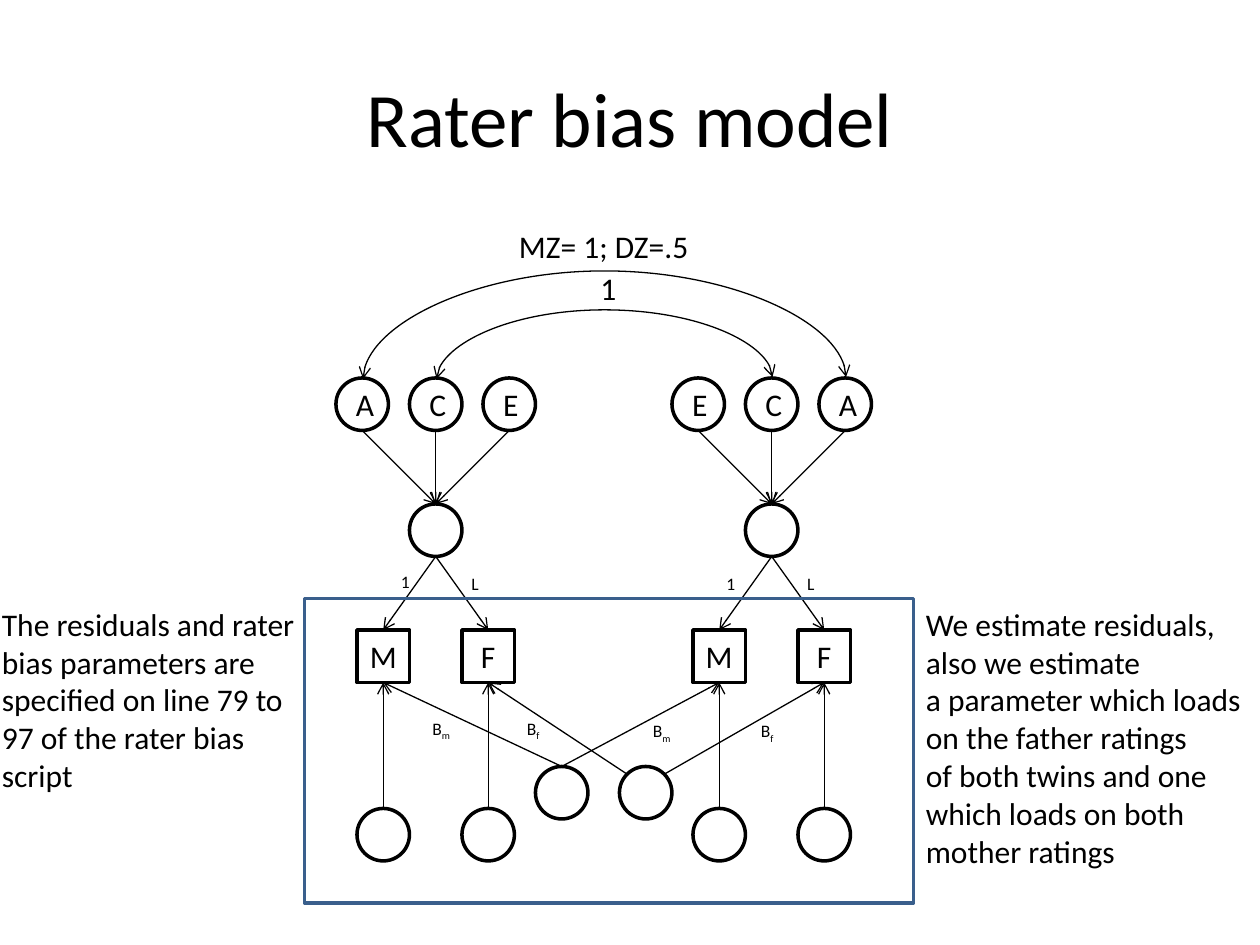
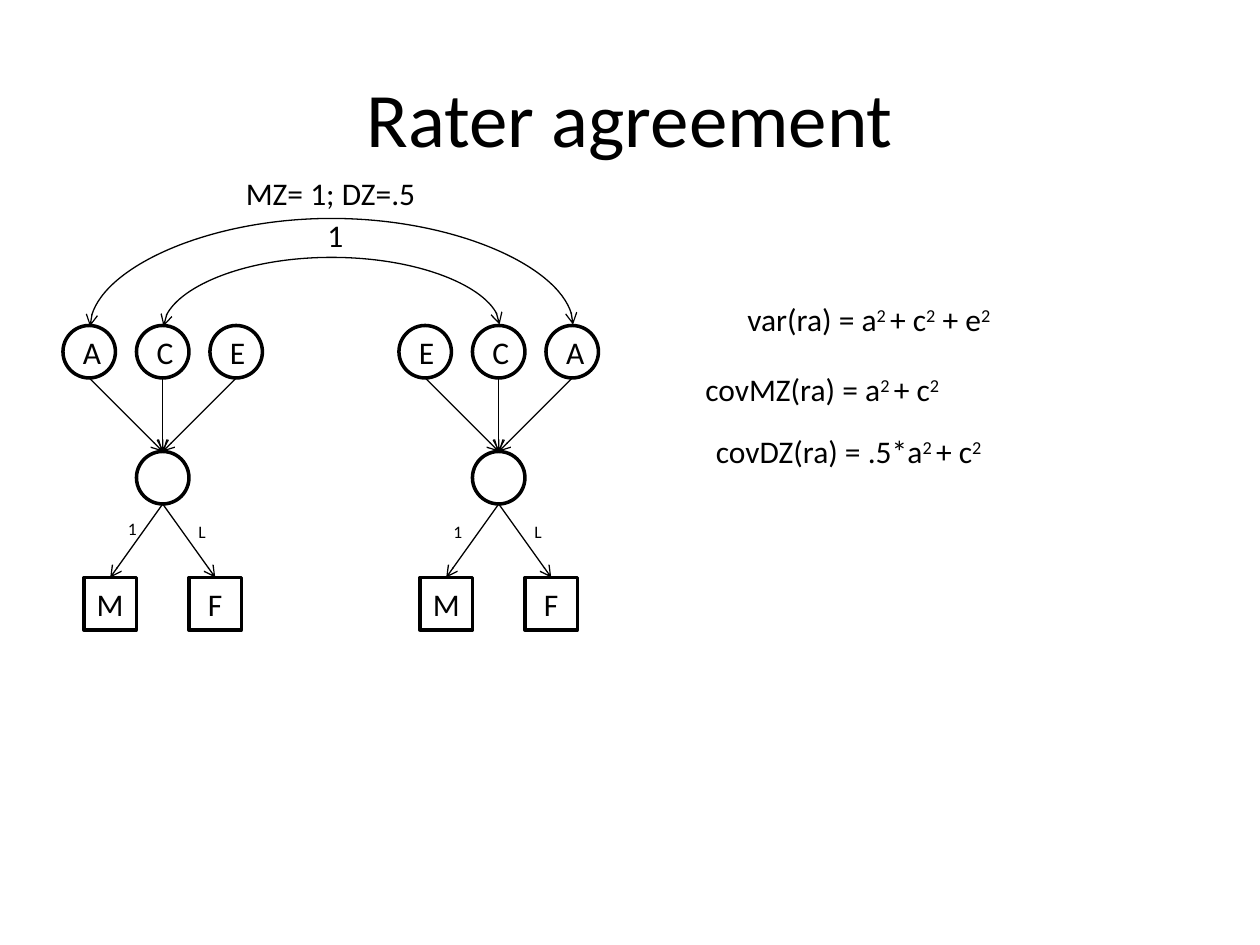
from pptx import Presentation
from pptx.dml.color import RGBColor
from pptx.enum.shapes import MSO_CONNECTOR, MSO_SHAPE
from pptx.enum.text import MSO_ANCHOR, MSO_AUTO_SIZE, PP_ALIGN
from pptx.oxml.ns import qn
from pptx.util import Inches, Pt
from lxml import etree

BLACK = RGBColor(0x00, 0x00, 0x00)
WHITE = RGBColor(0xFF, 0xFF, 0xFF)
FRAME_BLUE = RGBColor(0x3A, 0x5F, 0x8C)
CIRCLE, SQUARE = MSO_SHAPE.OVAL, MSO_SHAPE.RECTANGLE
STRAIGHT, CURVE = MSO_CONNECTOR.STRAIGHT, MSO_CONNECTOR.CURVE
CENTER, LEFT = PP_ALIGN.CENTER, PP_ALIGN.LEFT
MIDDLE, TOP = MSO_ANCHOR.MIDDLE, MSO_ANCHOR.TOP
FIT_SHAPE = MSO_AUTO_SIZE.SHAPE_TO_FIT_TEXT

FONT = "Calibri"
COLUMNS, ROWS = 120, 90
NODE = 5
HALF = NODE / 2
ARC_DEPTH = 1 / 6
SUPERSCRIPT, SUBSCRIPT = 30, -25

FACTOR_ROW, TRAIT_ROW, RATING_ROW = 36, 48, 60
BIAS_ROW, RESIDUAL_ROW = 73, 77
TWINS = {39: "ACE", 71: "ECA"}
RATER_OFFSETS = {"M": -5, "F": 5}


def write_text(frame, text, size=18, align=LEFT, anchor=TOP, wrap=True, shift=0):
    frame.word_wrap = wrap
    frame.vertical_anchor = anchor
    for index, line in enumerate(text.split("\n")):
        paragraph = frame.add_paragraph() if index else frame.paragraphs[0]
        paragraph.alignment = align
        for position, piece in enumerate(line.split("|")):
            if not piece:
                continue
            run = paragraph.add_run()
            run.text = piece
            run.font.name, run.font.size = FONT, Pt(size)
            run.font.color.rgb = BLACK
            if position % 2:
                run._r.get_or_add_rPr().set("baseline", str(shift * 1000))


class Drawing:
    def __init__(self):
        self.presentation = Presentation()
        self.presentation.slide_width = Inches(10)
        self.presentation.slide_height = Inches(7.5)
        self.column_width = self.presentation.slide_width / COLUMNS
        self.row_height = self.presentation.slide_height / ROWS
        self.slide = None
        self.origin = (0, 0)

    def point(self, column, row):
        return (round((column + self.origin[0]) * self.column_width),
                round((row + self.origin[1]) * self.row_height))

    def box(self, column, row, width, height):
        return (*self.point(column, row),
                round(width * self.column_width), round(height * self.row_height))

    def new_slide(self, title):
        self.slide = self.presentation.slides.add_slide(self.presentation.slide_layouts[6])
        self.origin = (0, 0)
        shape = self.slide.shapes.add_textbox(*self.box(6, 3.6, 108, 15))
        write_text(shape.text_frame, title, size=44, align=CENTER, anchor=MIDDLE)

    def label(self, text, column, row, width, height=4.85, **style):
        shape = self.slide.shapes.add_textbox(*self.box(column, row, width, height))
        write_text(shape.text_frame, text, wrap=False, **style)
        shape.text_frame.auto_size = FIT_SHAPE

    def small_label(self, text, column, row, width, **style):
        self.label(text, column, row, width, 3.23, size=10, **style)

    def outline(self, kind, column, row, width, height, color):
        shape = self.slide.shapes.add_shape(kind, *self.box(column, row, width, height))
        shape.shadow.inherit = False
        shape.fill.background()
        shape.line.color.rgb = color
        shape.line.width = Pt(2)
        return shape

    def node(self, kind, column, row, text=""):
        shape = self.outline(kind, column, row, NODE, NODE, BLACK)
        shape.fill.solid()
        shape.fill.fore_color.rgb = WHITE
        write_text(shape.text_frame, text, align=CENTER, anchor=MIDDLE)

    def connector(self, kind, start, end, ends):
        connector = self.slide.shapes.add_connector(
            kind, *self.point(*start), *self.point(*end))
        connector.line.color.rgb = BLACK
        connector.line.width = Pt(0.75)
        line = connector.line._get_or_add_ln()
        for name in ends:
            etree.SubElement(line, qn(f"a:{name}")).set("type", "arrow")
        etree.SubElement(connector._element.spPr, qn("a:effectLst"))
        return connector

    def arrow(self, start, end):
        self.connector(STRAIGHT, start, end, ["tailEnd"])

    def arc(self, center, row, span, rise):
        connector = self.connector(
            CURVE, (center + ARC_DEPTH / 2, row + span / 2),
            (center - ARC_DEPTH / 2, row - span / 2), ["headEnd", "tailEnd"])
        properties = connector._element.spPr
        properties.find(qn("a:xfrm")).set("rot", "5400000")
        geometry = properties.find(qn("a:prstGeom"))
        guides = geometry.find(qn("a:avLst"))
        if guides is None:
            guides = etree.SubElement(geometry, qn("a:avLst"))
        guide = etree.SubElement(guides, qn("a:gd"))
        guide.set("name", "adj1")
        guide.set("fmla", f"val {round(rise / ARC_DEPTH * 100000)}")


def draw_twin_model(drawing):
    for trait, factors in TWINS.items():
        middle = trait + HALF
        drawing.node(CIRCLE, trait, TRAIT_ROW)
        for rater, offset in RATER_OFFSETS.items():
            drawing.arrow((middle, TRAIT_ROW + NODE), (middle + offset, RATING_ROW))
            drawing.node(SQUARE, trait + offset, RATING_ROW, rater)
        for index, factor in enumerate(factors):
            column = trait + 7 * (index - 1)
            drawing.node(CIRCLE, column, FACTOR_ROW, factor)
            drawing.arrow((column + HALF, FACTOR_ROW + NODE), (middle, TRAIT_ROW))
    for span, rise in ((46, 10.36), (32, 6.62)):
        drawing.arc(57.57, FACTOR_ROW, span, rise)
    drawing.label("MZ= 1; DZ=.5", 48.24, 21, 18.72)
    drawing.label("1", 56, 25, 3.96)
    for text, column, row in (("1", 37, 53.76), ("L", 43.7, 54),
                              ("1", 68, 54), ("L", 75.7, 54)):
        drawing.small_label(text, column, row, 3.2)


def draw_rater_bias(drawing):
    rating_bottom = RATING_ROW + NODE
    for trait in TWINS:
        for offset in RATER_OFFSETS.values():
            column = trait + offset
            drawing.node(CIRCLE, column, RESIDUAL_ROW)
            drawing.arrow((column + HALF, RESIDUAL_ROW), (column + HALF, rating_bottom))
    mother_bias, father_bias = 51, 59
    corner = 0.73
    for column in (mother_bias, father_bias):
        drawing.node(CIRCLE, column, BIAS_ROW)
    for trait, father_side in zip(TWINS, (corner, NODE - corner)):
        middle = trait + HALF
        drawing.arrow((father_bias + father_side, BIAS_ROW + corner),
                      (middle + RATER_OFFSETS["F"], rating_bottom))
        drawing.arrow((mother_bias + HALF, BIAS_ROW),
                      (middle + RATER_OFFSETS["M"], rating_bottom))
    for text, column, row, width in (("B|m", 61, 68, 4.2), ("B|m", 40, 67.8, 4.2),
                                     ("B|f", 49, 67.8, 3.72), ("B|f", 71.28, 68, 3.72)):
        drawing.small_label(text, column, row, width, shift=SUBSCRIPT)
    drawing.outline(SQUARE, 29, 57, 58, 29, FRAME_BLUE)
    drawing.label("We estimate residuals,\nalso we estimate\na parameter which loads\n"
                  "on the father ratings\nof both twins and one\nwhich loads on both\n"
                  "mother ratings", 87, 57, 32.76, 26.64)
    drawing.label("The residuals and rater\nbias parameters are\nspecified on line 79 to\n"
                  "97 of the rater bias\nscript", -1, 57, 30.6, 19.44)


def draw_variance_formulas(drawing):
    for text, column, row, width in (
            ("var(ra) = a|2 |+ c|2| + e|2", 70, 28, 26.4),
            ("covMZ(ra) = a|2 |+ c|2", 66, 34.68, 26.04),
            ("covDZ(ra) = .5*a|2 |+ c|2", 67, 40.56, 29.04)):
        drawing.label(text, column, row, width, shift=SUPERSCRIPT)


def main():
    drawing = Drawing()
    drawing.new_slide("Rater bias model")
    draw_twin_model(drawing)
    draw_rater_bias(drawing)
    drawing.new_slide("Rater agreement")
    draw_variance_formulas(drawing)
    drawing.origin = (-26, -5)
    draw_twin_model(drawing)
    drawing.presentation.save("out.pptx")


if __name__ == "__main__":
    main()
